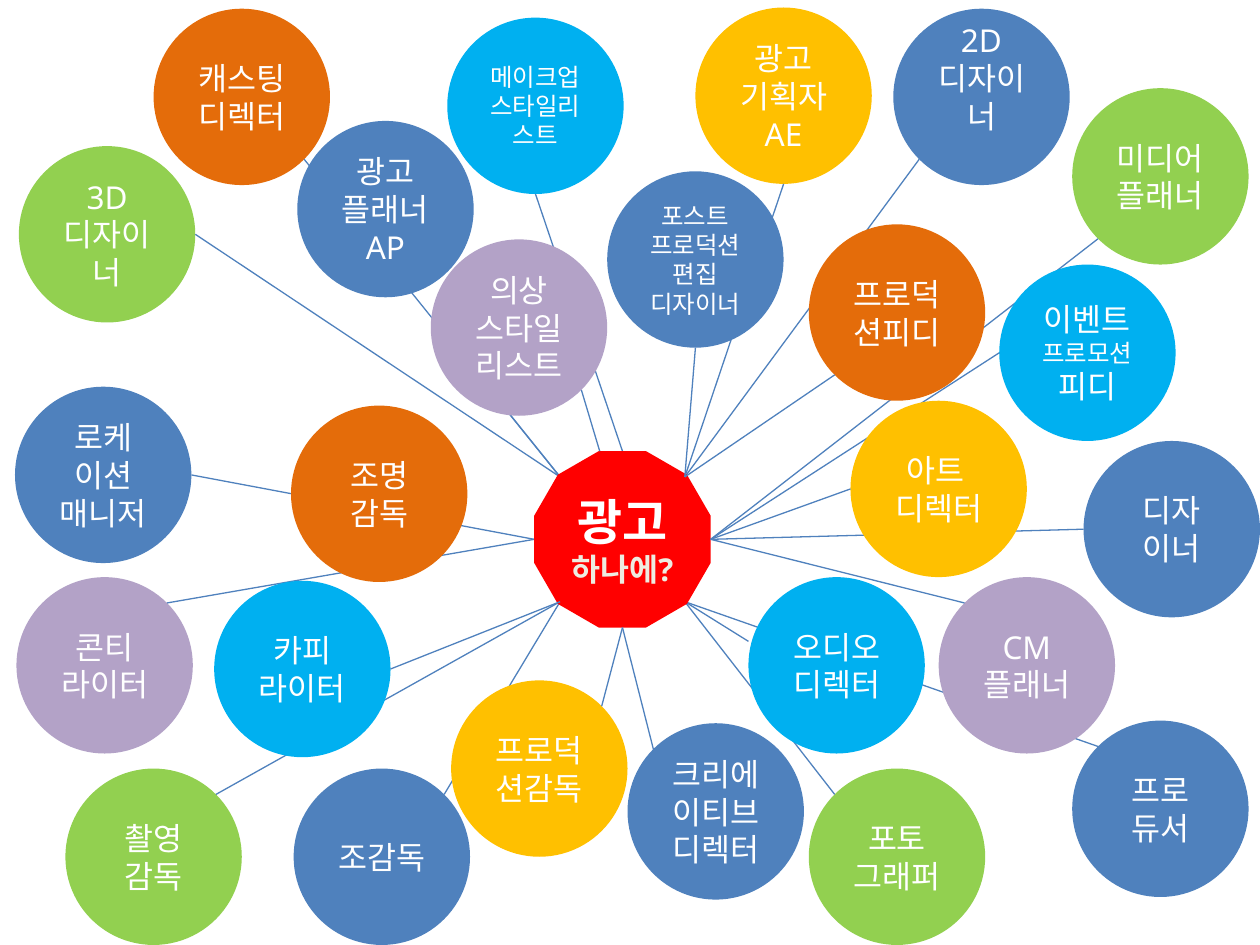
import dataclasses
import math

import lxml.etree
import pptx
import pptx.dml.color
import pptx.enum.shapes
import pptx.enum.text
import pptx.oxml.ns
import pptx.util

Pt = pptx.util.Pt
RGBColor = pptx.dml.color.RGBColor
Shapes = pptx.enum.shapes.MSO_SHAPE

ORANGE = RGBColor(0xE4, 0x6C, 0x0A)
SKY = RGBColor(0x00, 0xB0, 0xF0)
BLUE = RGBColor(0x4F, 0x81, 0xBD)
GREEN = RGBColor(0x92, 0xD0, 0x50)
PURPLE = RGBColor(0xB3, 0xA2, 0xC7)
YELLOW = RGBColor(0xFF, 0xC0, 0x00)
RED = RGBColor(0xFF, 0x00, 0x00)
WHITE = RGBColor(0xFF, 0xFF, 0xFF)
CREAM = RGBColor(0xEE, 0xEC, 0xE1)

DIAMETER = 100.8
HUB = (305.3, 257.8)
INSET = 3.6
LINE_HEIGHT = 21.7
DIRECTIONS = ("E", "SE", "S", "SW", "W", "NW", "N", "NE")
TEXT_FORMAT = {"name": "Noto Sans", "size": Pt(18), "bold": False}
FRAME_FORMAT = {
    "word_wrap": True,
    "vertical_anchor": pptx.enum.text.MSO_ANCHOR.MIDDLE,
    "margin_top": Pt(INSET),
    "margin_bottom": Pt(INSET),
}


@dataclasses.dataclass
class Role:
    """A circle; hub_end and role_end are compass directions or points."""
    text: str
    left: float
    top: float
    color: RGBColor
    hub_end: object = None
    role_end: object = None
    size: int = 18
    small_line: str = ""
    raised_lines: int = 0


ROLES_BEHIND = [
    Role("캐스팅\n디렉터", 87.8, 5, ORANGE, "NW", "SE"),
    Role("메이크업스타일리스트", 255.6, 10.1, SKY, "N", "S", size=14),
    Role("프로\n듀서", 612.7, 411.8, BLUE, "SE", "NW"),
    Role("광고\n플래너\nAP", 169.9, 69.1, BLUE, "NW", (249.8, 185)),
    Role("3D\n디자이너", 10.8, 83.5, GREEN, "NW", "E"),
    Role("콘티\n라이터", 9.4, 329.8, PURPLE, "W", "NE"),
    Role("촬영\n감독", 37.4, 439.2, GREEN, "SW", "NE"),
    Role("조감독", 167.8, 439.2, BLUE, "SW", "NE"),
    Role("포토\n그래퍼", 462.2, 439.2, GREEN, "SE", "NW"),
    Role("오디오\n디렉터", 427.7, 329.8, SKY, "SE", (427.7, 366.5)),
    Role("디자\n이너", 619.2, 252, BLUE, "E", "W"),
    Role("미디어\n플래너", 612.7, 50.4, GREEN, "E", "SW"),
    Role("2D\n디자이너", 510.5, 5, BLUE, "NE", "SW", raised_lines=1),
    Role("로케\n이션\n매니저", 8.6, 221, BLUE, "W", "E"),
    Role("조명\n감독", 166.3, 231.8, ORANGE),
]
ROLES_IN_FRONT = [
    Role("포스트\n프로덕션편집\n디자이너", 347, 97.9, BLUE, "NE", "S", size=14),
    Role("광고\n기획자\nAE", 397.4, 4.3, YELLOW, "NE", "S"),
    Role("이벤트\n프로모션\n피디", 571, 151.2, SKY, "E", "W", small_line="프로모션"),
    Role("아트 \n디렉터", 486, 229, YELLOW, "E", "W"),
    Role("CM\n플래너", 536.4, 329.8, PURPLE, "E", "NW"),
    Role("크리에이티브 디렉터", 358.6, 413.3, BLUE, "S", "NW"),
    Role("프로덕션감독", 257.8, 388.8, YELLOW, "S", "NE"),
    Role("카피\n라이터", 122.4, 331.9, SKY, "SW", "E"),
    Role("프로덕션피디", 462.2, 128.2, ORANGE, "NE", "SW"),
    Role("의상\n스타일리스트", 246.2, 136.8, PURPLE, (342.7, 257.8), "SE"),
]


def set_attributes(target, values):
    for name, value in values.items():
        setattr(target, name, value)


def rim_point(left, top, end):
    """Return a point as given, or find it on the rim by compass direction."""
    if isinstance(end, tuple):
        return end
    angle = DIRECTIONS.index(end) * math.pi / 4
    radius = DIAMETER / 2
    return (left + radius * (1 + math.cos(angle)),
            top + radius * (1 + math.sin(angle)))


def add_node(slide, kind, left, top, color):
    shape = slide.shapes.add_shape(
        kind, Pt(left), Pt(top), Pt(DIAMETER), Pt(DIAMETER))
    shape.shadow.inherit = False
    shape.fill.solid()
    shape.fill.fore_color.rgb = color
    shape.line.fill.background()
    set_attributes(shape.text_frame, FRAME_FORMAT)
    return shape


def add_run(paragraph, text, color=WHITE, **changes):
    paragraph.alignment = pptx.enum.text.PP_ALIGN.CENTER
    run = paragraph.add_run()
    run.text = text
    set_attributes(run.font, {**TEXT_FORMAT, **changes})
    run.font.color.rgb = color


def add_spoke(slide, start, end):
    connector = slide.shapes.add_connector(
        pptx.enum.shapes.MSO_CONNECTOR.STRAIGHT,
        *(Pt(length) for length in (*start, *end)))
    connector.line.color.rgb = BLUE
    connector.line.width = Pt(0.75)
    lxml.etree.SubElement(
        connector._element.spPr, pptx.oxml.ns.qn("a:effectLst"))


def add_role(slide, role):
    shape = add_node(slide, Shapes.OVAL, role.left, role.top, role.color)
    frame = shape.text_frame
    frame.margin_bottom = Pt(INSET + role.raised_lines * LINE_HEIGHT)
    for index, line in enumerate(role.text.split("\n")):
        paragraph = frame.add_paragraph() if index else frame.paragraphs[0]
        size = 14 if line == role.small_line else role.size
        add_run(paragraph, line, size=Pt(size))
    if role.hub_end:
        add_spoke(slide, rim_point(*HUB, role.hub_end),
                  rim_point(role.left, role.top, role.role_end))


def add_hub(slide):
    shape = add_node(slide, Shapes.DODECAGON, *HUB, RED)
    paragraph = shape.text_frame.paragraphs[0]
    add_run(paragraph, "광고", size=Pt(28), bold=True)
    add_run(paragraph, " ", size=Pt(24), bold=True)
    add_run(paragraph, "하나에?", CREAM, bold=True)


def main():
    presentation = pptx.Presentation()
    presentation.slide_width = Pt(720)
    presentation.slide_height = Pt(540)
    slide = presentation.slides.add_slide(presentation.slide_layouts[6])
    for role in ROLES_BEHIND:
        add_role(slide, role)
    add_hub(slide)
    for role in ROLES_IN_FRONT:
        add_role(slide, role)
    presentation.save("out.pptx")


if __name__ == "__main__":
    main()
